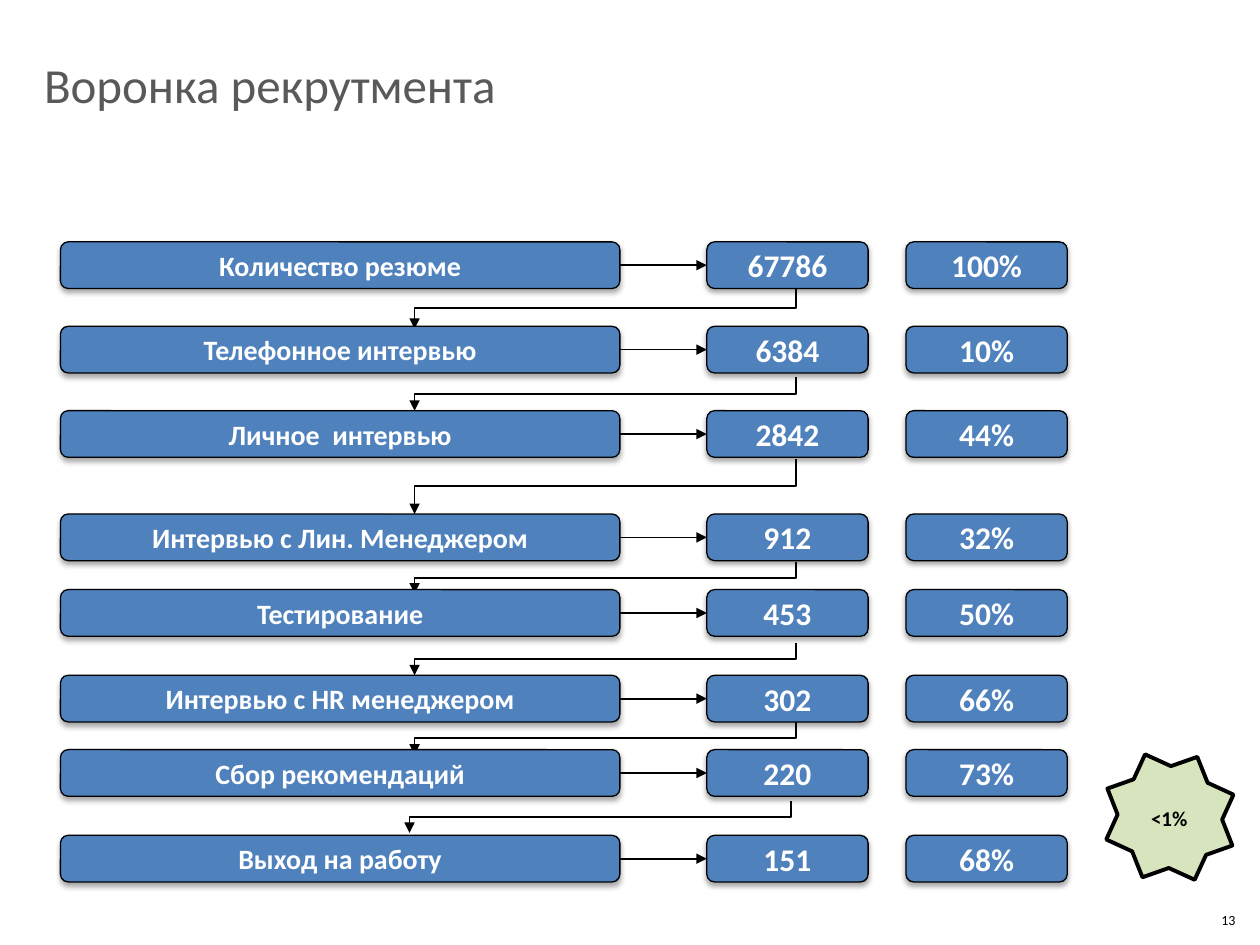
"""Build the recruitment funnel slide."""
from lxml import etree
from pptx import Presentation
from pptx.dml.color import RGBColor
from pptx.enum.shapes import MSO_CONNECTOR, MSO_SHAPE
from pptx.enum.text import MSO_ANCHOR, PP_ALIGN
from pptx.oxml import parse_xml
from pptx.oxml.ns import nsdecls, qn
from pptx.util import Inches, Pt

STRAIGHT, ELBOW = MSO_CONNECTOR.STRAIGHT, MSO_CONNECTOR.ELBOW
ROUNDED, STAR = MSO_SHAPE.ROUNDED_RECTANGLE, MSO_SHAPE.STAR_8_POINT
MIDDLE, CENTER, LEFT = MSO_ANCHOR.MIDDLE, PP_ALIGN.CENTER, PP_ALIGN.LEFT

BLUE = RGBColor(0x4F, 0x81, 0xBD)
GREEN = RGBColor(0xD7, 0xE4, 0xBD)
GREY = RGBColor(0x59, 0x59, 0x59)
BLACK = RGBColor(0, 0, 0)
WHITE = RGBColor(0xFF, 0xFF, 0xFF)

BOX_H = 0.37
COLUMNS = [(0.48, 4.44, 16), (5.61, 1.28, 18), (7.19, 1.28, 18)]
STAGES = [
    (1.92, "Количество резюме", "67786", "100%"),
    (2.59, "Телефонное интервью", "6384", "10%"),
    (3.26, "Личное  интервью", "2842", "44%"),
    (4.08, "Интервью с Лин. Менеджером", "912", "32%"),
    (4.68, "Тестирование", "453", "50%"),
    (5.36, "Интервью с HR менеджером", "302", "66%"),
    (5.95, "Сбор рекомендаций", "220", "73%"),
    (6.63, "Выход на работу", "151", "68%"),
]
RETURNS = [
    (6.32, 2.28, 2.61), (6.32, 2.99, 3.26), (6.32, 3.64, 4.08), (6.32, 4.46, 4.71),
    (6.32, 5.1, 5.36), (6.32, 5.73, 5.99), (6.28, 6.36, 6.61),
]
RETURN_W = 3.03
SHADOW = (
    f'<a:effectLst {nsdecls("a")}><a:outerShdw blurRad="{Pt(3.1)}" dist="{Pt(1.8)}" '
    'dir="5400000" rotWithShape="0"><a:srgbClr val="000000"><a:alpha val="35000"/>'
    '</a:srgbClr></a:outerShdw></a:effectLst>'
)


def write(sp, text, size, color, bold=False, align=CENTER):
    tf = sp.text_frame
    tf.vertical_anchor = MIDDLE
    p = tf.paragraphs[0]
    p.alignment = align
    r = p.add_run()
    r.text = text
    r.font.name = "Calibri"
    r.font.size = Pt(size)
    r.font.bold = bold
    r.font.color.rgb = color
    return tf


def add_arrow(kind, x1, y1, x2, y2):
    c = s.shapes.add_connector(kind, Inches(x1), Inches(y1), Inches(x2), Inches(y2))
    c.line.color.rgb = BLACK
    c.line.width = Pt(1)
    etree.SubElement(c.line._get_or_add_ln(), qn("a:tailEnd"), type="triangle")
    etree.SubElement(c.element.spPr, qn("a:effectLst"))
    return c


prs = Presentation()
prs.slide_width = Inches(10)
prs.slide_height = Inches(7.5)
s = prs.slides.add_slide(prs.slide_layouts[6])

title = s.shapes.add_textbox(0, 0, Inches(6.57), Inches(1.33))
tf = write(title, "Воронка рекрутмента", 28, GREY, align=LEFT)
tf.word_wrap = True
tf.margin_left = Inches(0.35)

for x, y1, y2 in RETURNS:
    cx, cy = x - RETURN_W / 2, (y1 + y2) / 2
    half_w, half_h = (y2 - y1) / 2, RETURN_W / 2
    c = add_arrow(ELBOW, cx - half_w, cy - half_h, cx + half_w, cy + half_h)
    c.element.spPr.find(qn("a:xfrm")).set("rot", "5400000")

for top, *texts in STAGES:
    boxes = []
    for (left, width, size), text in zip(COLUMNS, texts):
        sp = s.shapes.add_shape(ROUNDED, Inches(left), Inches(top), Inches(width), Inches(BOX_H))
        sp.fill.solid()
        sp.fill.fore_color.rgb = BLUE
        sp.line.color.rgb = BLACK
        sp.line.width = Pt(0.75)
        sp.element.spPr.append(parse_xml(SHADOW))
        write(sp, text, size, WHITE, bold=True)
        boxes.append(sp)
    mid = top + BOX_H / 2
    c = add_arrow(STRAIGHT, 4.92, mid, 5.61, mid)
    c.begin_connect(boxes[0], 3)
    c.end_connect(boxes[1], 1)

star = s.shapes.add_shape(STAR, Inches(8.74), Inches(5.96), Inches(1.09), Inches(1.05))
star.adjustments[0] = 0.383
star.rotation = 24.5
star.shadow.inherit = False
star.fill.solid()
star.fill.fore_color.rgb = GREEN
star.line.color.rgb = BLACK
star.line.width = Pt(2.25)

total = s.shapes.add_textbox(Inches(8.91), Inches(6.34), Inches(0.74), Inches(0.3))
total.fill.solid()
total.fill.fore_color.rgb = GREEN
write(total, "<1%", 12, BLACK, bold=True).word_wrap = True

number = s.shapes.add_textbox(Inches(9.58), Inches(7.18), Inches(0.34), Inches(0.24))
write(number, "13", 8, BLACK).word_wrap = False

prs.save("out.pptx")
